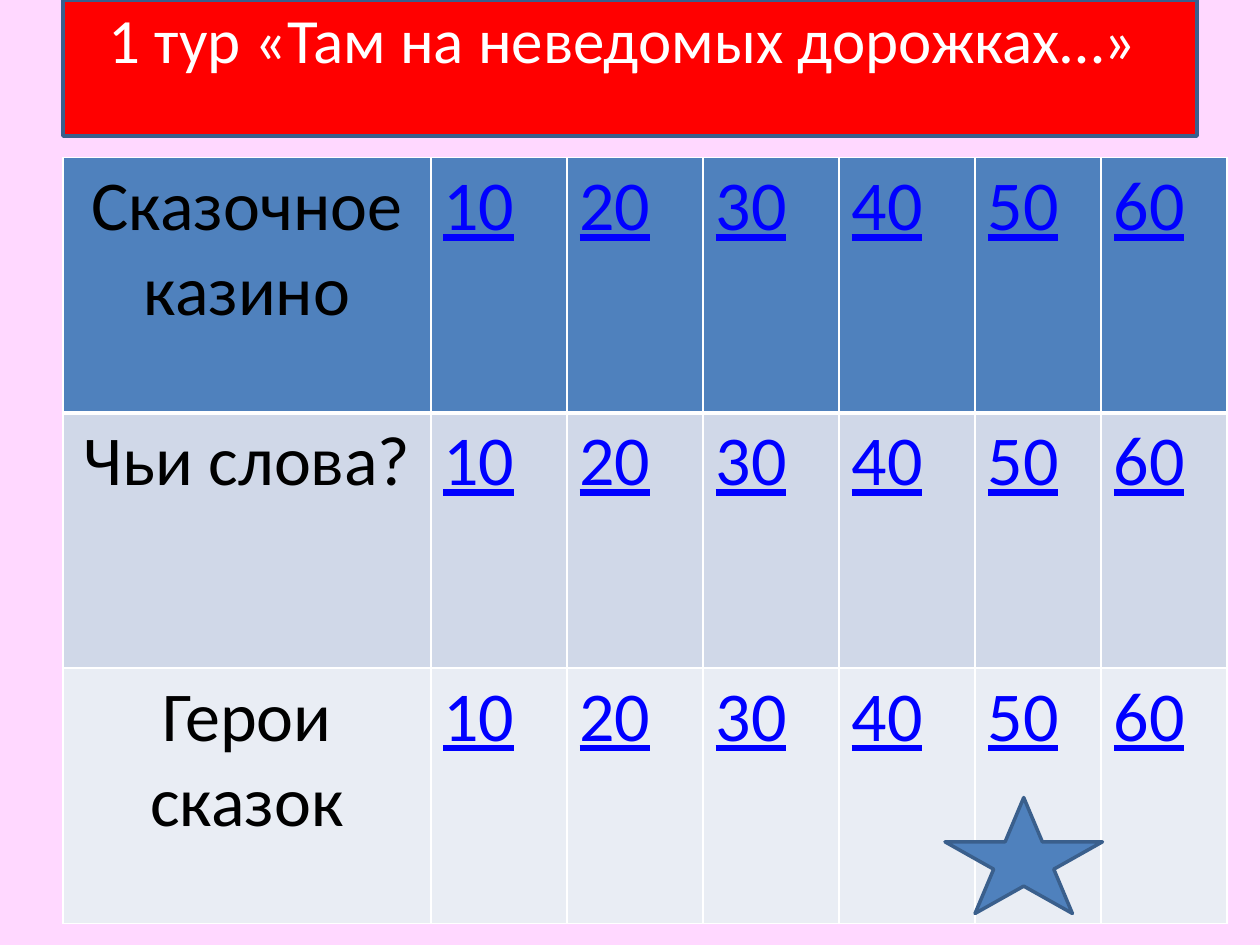
import dataclasses

import pptx
import pptx.dml.color
import pptx.enum.shapes
import pptx.enum.text
import pptx.oxml
import pptx.oxml.ns
import pptx.util

Inches = pptx.util.Inches
Pt = pptx.util.Pt


@dataclasses.dataclass(frozen=True)
class Theme:
    """Colours, font and sizes of the game board."""
    font: str = "Calibri"
    background: str = "FFD8FF"
    banner: str = "FF0000"
    banner_text: str = "FFFFFF"
    accent: str = "4F81BD"
    outline: str = "3A5F8C"
    grid: str = "FFFFFF"
    topic_text: str = "000000"
    points_text: str = "0000FF"
    row_fills: tuple = ("4F81BD", "D0D8E8", "E9EDF4")
    title_size: int = 36
    cell_size: int = 40


THEME = Theme()
TOPICS = ("Сказочное казино", "Чьи слова?", "Герои сказок")
POINTS = ("10", "20", "30", "40", "50", "60")
COLUMN_WIDTHS = (2.92, 1.08, 1.08, 1.08, 1.08, 1, 1)


def paint(fill, colour):
    """Make a fill solid in the given colour."""
    fill.solid()
    fill.fore_color.rgb = pptx.dml.color.RGBColor.from_string(colour)


def style_shape(shape, colour):
    """Give a shape a solid fill and the common outline, without shadow."""
    shape.shadow.inherit = False
    paint(shape.fill, colour)
    paint(shape.line.fill, THEME.outline)
    shape.line.width = Pt(2)


def add_run(paragraph, text, size, colour, underline=False):
    """Add one formatted run to a paragraph."""
    run = paragraph.add_run()
    run.text = text
    run.font.name = THEME.font
    run.font.size = Pt(size)
    run.font.bold = False
    run.font.underline = underline
    run.font.color.rgb = pptx.dml.color.RGBColor.from_string(colour)


def add_borders(cell, **widths):
    """Draw the cell borders, with widths in points by side."""
    properties = cell._tc.get_or_add_tcPr()
    for side in "LRTB":
        properties.append(pptx.oxml.parse_xml(
            f'<a:ln{side} {pptx.oxml.ns.nsdecls("a")} w="{Pt(widths.get(side, 1))}">'
            f'<a:solidFill><a:srgbClr val="{THEME.grid}"/></a:solidFill></a:ln{side}>'))


def place_title(slide, left, top, width, height):
    """Turn the title placeholder into the round banner."""
    title = slide.shapes.title
    title.left, title.top, title.width, title.height = left, top, width, height
    style_shape(title, THEME.banner)
    frame = title.text_frame
    frame.word_wrap = True
    frame.auto_size = pptx.enum.text.MSO_AUTO_SIZE.NONE
    frame.vertical_anchor = pptx.enum.text.MSO_ANCHOR.TOP
    frame.margin_top = 0
    frame.margin_right = Inches(0.22)
    paragraph = frame.paragraphs[0]
    paragraph.alignment = pptx.enum.text.PP_ALIGN.CENTER
    add_run(paragraph, "1 тур «Там на неведомых дорожках…»",
            THEME.title_size, THEME.banner_text)


def place_board(slide, left, top, width, height):
    """Build the table of topics and point values."""
    table = slide.shapes.add_table(
        len(TOPICS), len(COLUMN_WIDTHS), left, top, width, height).table
    for column, column_width in zip(table.columns, COLUMN_WIDTHS):
        column.width = Inches(column_width)
    for row_index, (topic, colour) in enumerate(zip(TOPICS, THEME.row_fills)):
        for column_index, text in enumerate((topic, *POINTS)):
            cell = table.cell(row_index, column_index)
            add_borders(cell, T=3 if row_index == 1 else 1, B=3 if row_index == 0 else 1)
            paint(cell.fill, colour)
            paragraph = cell.text_frame.paragraphs[0]
            is_topic = column_index == 0
            if is_topic:
                paragraph.alignment = pptx.enum.text.PP_ALIGN.CENTER
            add_run(paragraph, text, THEME.cell_size,
                    THEME.topic_text if is_topic else THEME.points_text,
                    underline=not is_topic)


def place_star(slide, left, top, width, height):
    """Add the five-pointed star."""
    star = slide.shapes.add_shape(
        pptx.enum.shapes.MSO_SHAPE.STAR_5_POINT, left, top, width, height)
    style_shape(star, THEME.accent)


def main():
    """Build and save the game board slide."""
    presentation = pptx.Presentation()
    presentation.slide_width = Inches(10)
    presentation.slide_height = Inches(7.5)
    slide = presentation.slides.add_slide(presentation.slide_layouts[5])
    paint(slide.background.fill, THEME.background)
    place_title(slide, Inches(0.5), Inches(0), Inches(9), Inches(1.08))
    place_board(slide, Inches(0.5), Inches(1.25), Inches(9.25), Inches(6.08))
    place_star(slide, Inches(7.5), Inches(6.33), Inches(1.25), Inches(0.92))
    presentation.save("out.pptx")


if __name__ == "__main__":
    main()
